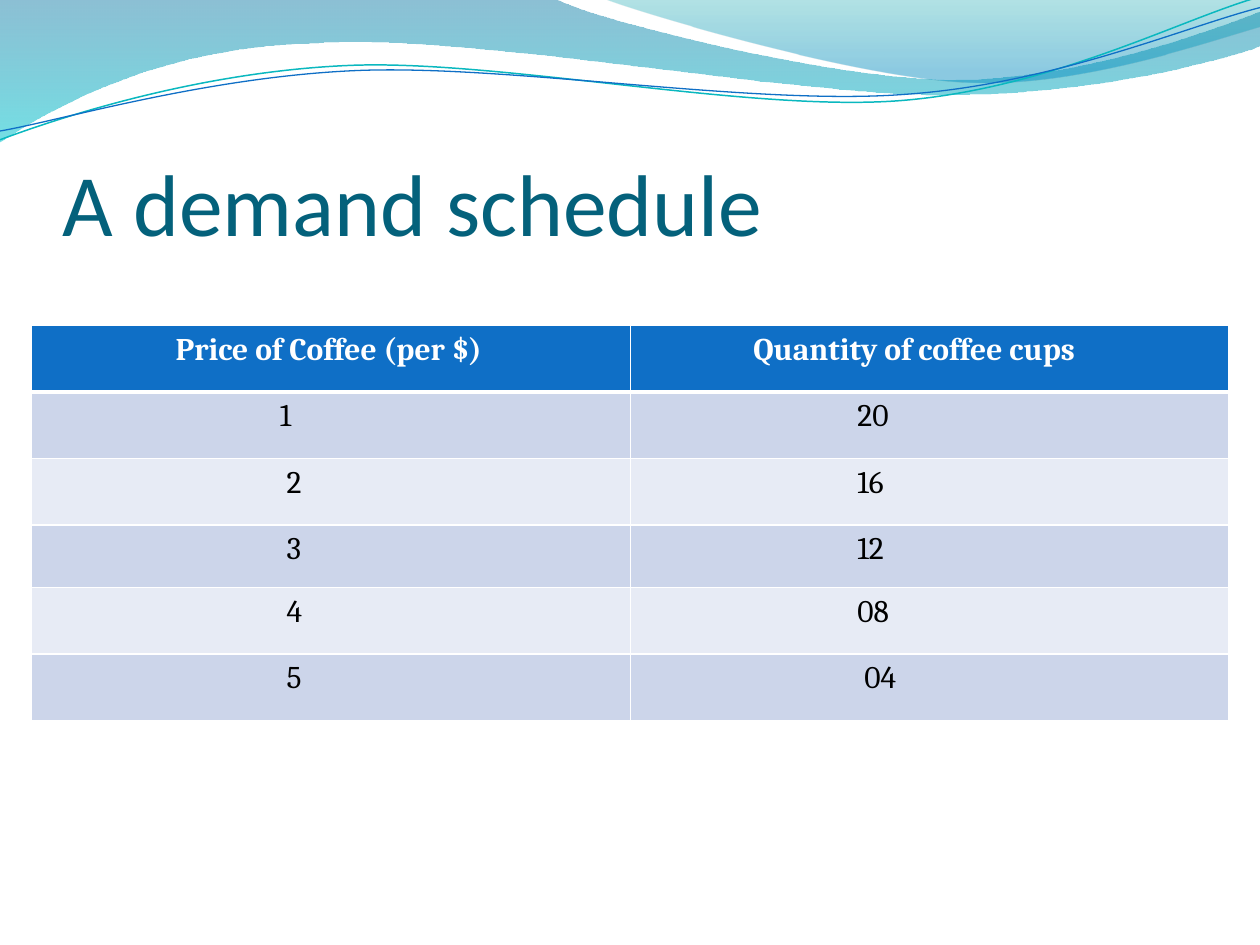
"""Build the coffee demand schedule slide with its wave header."""
import math

from lxml import etree
from pptx import Presentation
from pptx import util as u
from pptx.dml.color import RGBColor
from pptx.enum import text
from pptx.oxml import parse_xml
from pptx.oxml.ns import nsdecls, qn

COLORS = {"title": "04617B", "header": "0F6FC6", "band": "CCD5EA", "pale": "E7EBF5",
          "white": "FFFFFF", "black": "000000", "teal": "0AB8BF", "blue": "0F6FC6",
          "wave_top": "0074A1", "wave_end": "00C6CF",
          "corner_top": "00A1A9", "corner_end": "008BBF"}
INCH = 2.54

TITLE = "A demand schedule"
HEADINGS = [("Price of Coffee (per $)", 2.9), ("Quantity of coffee cups", 2.48)]
ROWS = [
    [("1", 5), ("20", 4.58)],
    [("2", 5.14), ("16", 4.58)],
    [("3", 5.14), ("12", 4.58)],
    [("4", 5.14), ("08", 4.58)],
    [("5", 5.14), ("04", 4.72)],
]
ROW_HEIGHTS = [1.34, 1.34, 1.34, 1.26, 1.34, 1.34]

WAVES = [
    {"frame": (-0.01, -0.01, 10.02, 1.14),
     "path": [(0, 0), (4.4, -0.01), (4.76, 0.17, 6.64, 0.63, 7.58, 0.63),
              (8.53, 0.63, 9.58, 0.26, 10, 0.09), (10.01, 0.36),
              (9.83, 0.44, 8.7, 0.76, 7.46, 0.75), (6.22, 0.75, 3.82, 0.28, 2.57, 0.34),
              (1.29, 0.36, 0.46, 0.83, -0.01, 1.13), (0, 0)],
     "stops": [(0, "wave_top", 45), (1, "wave_end", 55)]},
    {"frame": (4.79, -0.01, 5.21, 0.7),
     "path": [(4.79, -0.01), (5.09, 0.11, 6.82, 0.62, 7.69, 0.65),
              (8.56, 0.69, 9.61, 0.32, 10, 0.21), (10, 0), (4.79, -0.01)],
     "stops": [(0, "corner_top", 30), (0.8, "corner_end", 45)]},
]
TILT = -2.7
STRANDS = [
    {"frame": (-0.02, 0.22, 10.02, 0.71),
     "path": [(0, 1.11), (0.48, 0.93, 1.58, 0.57, 2.77, 0.52),
              (3.95, 0.47, 5.93, 0.89, 7.13, 0.8), (8.33, 0.71, 9.38, 0.15, 9.98, -0.02)],
     "color": "teal", "width": 0.85},
    {"frame": (-0.02, 0.3, 10.03, 0.58),
     "path": [(0, 1.04), (0.47, 0.96, 1.64, 0.61, 2.83, 0.56),
              (4.03, 0.51, 5.97, 0.84, 7.17, 0.75), (8.36, 0.67, 9.41, 0.21, 10, 0.06)],
     "color": "blue", "width": 0.75},
]


def rgb(name):
    return RGBColor.from_string(COLORS[name])


def to_local(x, y, frame, tilt):
    left, top, width, height = frame
    turn = math.radians(-tilt)
    dx, dy = x - left - width / 2, y - top - height / 2
    return (u.Cm((dx * math.cos(turn) - dy * math.sin(turn) + width / 2) * INCH),
            u.Cm((dx * math.sin(turn) + dy * math.cos(turn) + height / 2) * INCH))


def add_outline(page, frame, segments, tilt=0, close=False):
    left, top, width, height = (u.Cm(value * INCH) for value in frame)
    builder = page.shapes.build_freeform(0, 0, scale=1.0)
    builder.add_line_segments([(width, height)], close=close)
    shape = builder.convert_to_shape(left, top)
    shape.left, shape.top, shape.width, shape.height = left, top, width, height
    shape.rotation = tilt
    shape.shadow.inherit = False
    outline = next(shape._element.iter(qn("a:path")))
    for child in list(outline)[:2]:
        outline.remove(child)
    for index, segment in enumerate(segments):
        kind = "moveTo" if index == 0 else "lnTo" if len(segment) == 2 else "cubicBezTo"
        move = etree.Element(qn(f"a:{kind}"))
        for x, y in zip(segment[::2], segment[1::2]):
            local_x, local_y = to_local(x, y, frame, tilt)
            etree.SubElement(move, qn("a:pt"), x=str(int(local_x)), y=str(int(local_y)))
        outline.insert(index, move)
    return shape


def add_wave(page, wave):
    shape = add_outline(page, wave["frame"], wave["path"], close=True)
    shape.line.fill.background()
    shape.fill.gradient()
    shape.fill.gradient_angle = 270
    for stop, (position, color, opacity) in zip(shape.fill.gradient_stops, wave["stops"]):
        stop.position = position
        stop.color.rgb = rgb(color)
    tints = shape._element.spPr.iter(qn("a:srgbClr"))
    for tint, (position, color, opacity) in zip(tints, wave["stops"]):
        tint.append(parse_xml(f'<a:alpha {nsdecls("a")} val="{opacity * 1000}"/>'))


def add_strand(page, strand):
    shape = add_outline(page, strand["frame"], strand["path"], tilt=TILT)
    shape.fill.background()
    shape.line.color.rgb = rgb(strand["color"])
    shape.line.width = u.Pt(strand["width"])


def style(para, font, size, color, bold=False):
    for span in para.runs:
        span.font.name = font
        span.font.size = u.Pt(size)
        span.font.bold = bold
        span.font.color.rgb = rgb(color)


def set_borders(cell, top, bottom):
    properties = cell._tc.get_or_add_tcPr()
    for side, width in (("L", 1), ("R", 1), ("T", top), ("B", bottom)):
        properties.append(parse_xml(
            f'<a:ln{side} {nsdecls("a")} w="{u.Pt(width)}"><a:solidFill>'
            f'<a:srgbClr val="{COLORS["white"]}"/></a:solidFill></a:ln{side}>'))


def add_title(page):
    box = page.shapes.add_textbox(u.Cm(1.27), u.Cm(1.96), u.Cm(22.86), u.Cm(3.17))
    frame = box.text_frame
    frame.word_wrap = True
    frame.vertical_anchor = text.MSO_ANCHOR.BOTTOM
    frame.margin_left = frame.margin_right = frame.margin_bottom = 0
    frame.text = TITLE
    style(frame.paragraphs[0], "Calibri", 50, "title")


def add_schedule(page):
    content = [HEADINGS] + ROWS
    table = page.shapes.add_table(len(content), len(HEADINGS), u.Cm(0.64), u.Cm(6.56),
                                  u.Cm(24.13), u.Cm(sum(ROW_HEIGHTS))).table
    for index, (entries, height) in enumerate(zip(content, ROW_HEIGHTS)):
        table.rows[index].height = u.Cm(height)
        heading = index == 0
        fill = "header" if heading else "band" if index % 2 else "pale"
        for column, (label, indent) in enumerate(entries):
            cell = table.cell(index, column)
            cell.text_frame.text = label
            cell.margin_left = u.Cm(indent)
            set_borders(cell, 3 if index == 1 else 1, 3 if heading else 1)
            cell.fill.solid()
            cell.fill.fore_color.rgb = rgb(fill)
            style(cell.text_frame.paragraphs[0], "Cambria", 18,
                  "white" if heading else "black", heading)


def main():
    deck = Presentation()
    deck.slide_width, deck.slide_height = u.Cm(25.4), u.Cm(19.05)
    page = deck.slides.add_slide(deck.slide_layouts[6])
    for wave in WAVES:
        add_wave(page, wave)
    for strand in STRANDS:
        add_strand(page, strand)
    add_title(page)
    add_schedule(page)
    deck.save("out.pptx")


if __name__ == "__main__":
    main()
